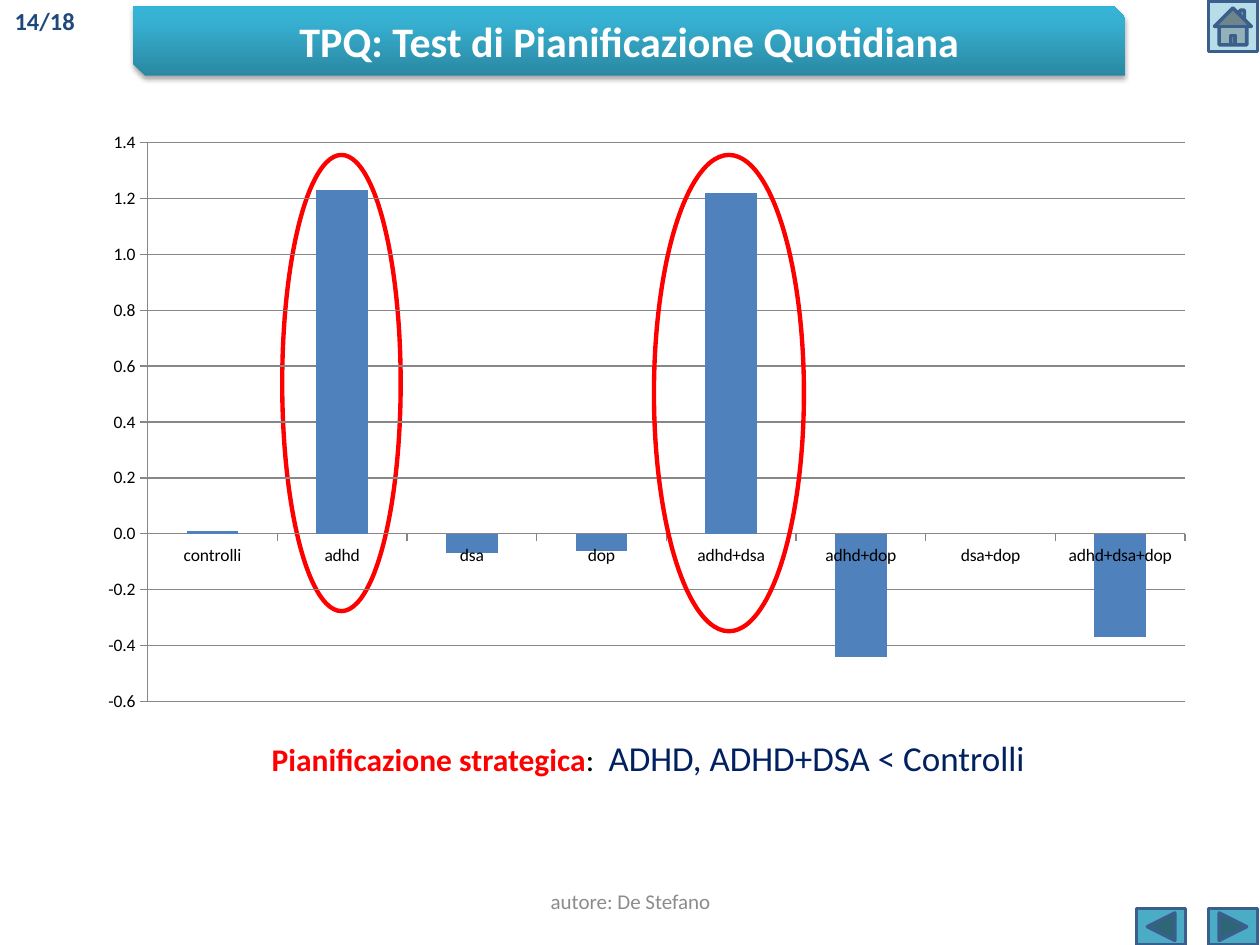
from lxml import etree
from pptx import Presentation
from pptx.chart.data import CategoryChartData
from pptx.dml.color import RGBColor
from pptx.enum.chart import XL_CHART_TYPE, XL_TICK_MARK
from pptx.enum.shapes import MSO_SHAPE as SHAPE
from pptx.enum.text import MSO_ANCHOR as ANCHOR, PP_ALIGN
from pptx.oxml import parse_xml
from pptx.oxml.ns import nsdecls, qn
from pptx.util import Inches, Pt

FONT = "Calibri"
WHITE = RGBColor(0xFF, 0xFF, 0xFF)
BLACK = RGBColor(0x00, 0x00, 0x00)
RED = RGBColor(0xFF, 0x00, 0x00)
NAVY = RGBColor(0x00, 0x20, 0x60)
DARK_BLUE = RGBColor(0x1F, 0x49, 0x7D)
BAR_BLUE = RGBColor(0x4F, 0x81, 0xBD)
BUTTON_LINE = RGBColor(0x3A, 0x5F, 0x8C)
TEAL = RGBColor(0x4B, 0xAC, 0xC6)
PALE_TEAL = RGBColor(0xB7, 0xDE, 0xE8)
GREY = RGBColor(0x8C, 0x8C, 0x8C)
GRID_GREY = RGBColor(0x87, 0x87, 0x87)
TITLE_STOPS = [(0, "2A88A2"), (80, "37B1D2"), (100, "34B4D6")]

SCORES = {
    "controlli": 0.01, "adhd": 1.23, "dsa": -0.07, "dop": -0.06,
    "adhd+dsa": 1.22, "adhd+dop": -0.44, "dsa+dop": 0, "adhd+dsa+dop": -0.37,
}


def inches(box):
    return [Inches(v) for v in box]


def add_run(p, text, size=18, color=BLACK, bold=False):
    r = p.add_run()
    r.text = text
    r.font.name, r.font.size, r.font.bold = FONT, Pt(size), bold
    r.font.color.rgb = color


def write(sp, *runs, anchor=ANCHOR.TOP):
    """Fill a shape with one centred paragraph of (text, format) runs."""
    tf = sp.text_frame
    tf.word_wrap = True
    tf.vertical_anchor = anchor
    p = tf.paragraphs[0]
    p.alignment = PP_ALIGN.CENTER
    for text, fmt in runs:
        add_run(p, text, **fmt)


def add_shape(s, kind, box, fill=None, line=None, width=2):
    sp = s.shapes.add_shape(kind, *inches(box))
    sp.shadow.inherit = False
    if fill is None:
        sp.fill.background()
    else:
        sp.fill.solid()
        sp.fill.fore_color.rgb = fill
    if line is None:
        sp.line.fill.background()
    else:
        sp.line.color.rgb = line
        sp.line.width = Pt(width)
    return sp


def add_title(s, box, text):
    sp = add_shape(s, SHAPE.SNIP_2_DIAG_RECTANGLE, box)
    sp.fill.gradient()
    sp.fill.gradient_angle = 90
    spPr = sp._element.spPr
    stops = spPr.find(qn("a:gradFill")).find(qn("a:gsLst"))
    for old in list(stops):
        stops.remove(old)
    for pos, color in TITLE_STOPS:
        gs = etree.SubElement(stops, qn("a:gs"), pos=str(pos * 1000))
        etree.SubElement(gs, qn("a:srgbClr"), val=color)
    spPr.find(qn("a:effectLst")).append(parse_xml(
        f'<a:outerShdw {nsdecls("a")} blurRad="40000" dist="23000" dir="5400000" '
        'rotWithShape="0"><a:srgbClr val="000000"><a:alpha val="35000"/>'
        '</a:srgbClr></a:outerShdw>'))
    write(sp, (text, dict(size=24, color=WHITE, bold=True)), anchor=ANCHOR.MIDDLE)


def add_page_number(s, box, text):
    sp = add_shape(s, SHAPE.RECTANGLE, box, fill=WHITE)
    write(sp, (text, dict(size=14, color=DARK_BLUE, bold=True)))


def add_text(s, box, *runs, anchor=ANCHOR.TOP):
    write(s.shapes.add_textbox(*inches(box)), *runs, anchor=anchor)


def add_highlight(s, box):
    add_shape(s, SHAPE.OVAL, box, line=RED, width=2.5)


def set_plot_area(chart, x, y, w, h):
    """Fix the inner plot area, in fractions of the chart."""
    plot_area = chart._chartSpace.chart.plotArea
    for old in plot_area.findall(qn("c:layout")):
        plot_area.remove(old)
    layout = parse_xml(f'<c:layout {nsdecls("c")}><c:manualLayout/></c:layout>')
    settings = [("layoutTarget", "inner"), ("xMode", "edge"), ("yMode", "edge"),
                ("x", x), ("y", y), ("w", w), ("h", h)]
    for name, val in settings:
        etree.SubElement(layout[0], qn(f"c:{name}"), val=str(val))
    plot_area.insert(0, layout)


def add_score_chart(s, box):
    data = CategoryChartData()
    data.categories = list(SCORES)
    data.add_series("Series 1", list(SCORES.values()))
    chart = s.shapes.add_chart(
        XL_CHART_TYPE.COLUMN_CLUSTERED, *inches(box), data).chart
    chart.has_legend = chart.has_title = False
    chart.font.name, chart.font.size = FONT, Pt(10)
    chart.font.color.rgb = BLACK

    plot = chart.plots[0]
    plot.gap_width = 150
    plot.vary_by_categories = False
    bars = plot.series[0]
    bars.invert_if_negative = False
    bars.format.fill.solid()
    bars.format.fill.fore_color.rgb = BAR_BLUE

    values = chart.value_axis
    values.minimum_scale, values.maximum_scale, values.major_unit = -0.6, 1.4, 0.2
    values.has_major_gridlines = True
    values.tick_labels.number_format = "#,##0.0"
    values.tick_labels.number_format_is_linked = False
    for axis in (values, chart.category_axis):
        axis.major_tick_mark = XL_TICK_MARK.OUTSIDE
        axis.minor_tick_mark = XL_TICK_MARK.NONE
    for part in (values, chart.category_axis, values.major_gridlines):
        part.format.line.color.rgb = GRID_GREY
        part.format.line.width = Pt(0.75)
    set_plot_area(chart, 0.071, 0.03, 0.925, 0.94)


def add_nav_buttons(s, right, top, bottom):
    """Home button at the top right, back and next at the bottom right."""
    w, h, step = 0.39, 0.29, 0.57
    x = right - w
    buttons = [
        (SHAPE.ACTION_BUTTON_HOME, (x, top, w, 0.4), PALE_TEAL),
        (SHAPE.ACTION_BUTTON_FORWARD_OR_NEXT, (x, bottom - h, w, h), TEAL),
        (SHAPE.ACTION_BUTTON_BACK_OR_PREVIOUS, (x - step, bottom - h, w, h), TEAL),
    ]
    for kind, box, fill in buttons:
        add_shape(s, kind, box, fill=fill, line=BUTTON_LINE)


def main():
    prs = Presentation()
    prs.slide_width, prs.slide_height = Inches(10), Inches(7.5)
    s = prs.slides.add_slide(prs.slide_layouts[6])
    add_page_number(s, (0, 0, 0.71, 0.34), "14/18")
    add_title(s, (1.06, 0.05, 7.87, 0.55), "TPQ: Test di Pianificazione Quotidiana")
    add_nav_buttons(s, right=9.98, top=0.01, bottom=7.5)
    add_highlight(s, (2.24, 1.23, 0.94, 3.62))
    add_score_chart(s, (0.54, 0.99, 8.9, 4.72))
    add_text(s, (1.01, 5.8, 8.27, 0.44),
             ("Pianificazione strategica", dict(color=RED, bold=True)),
             (":  ", {}),
             ("ADHD, ADHD+DSA < Controlli", dict(size=20, color=NAVY)))
    add_highlight(s, (5.19, 1.23, 1.19, 3.78))
    add_text(s, (3.42, 6.95, 3.17, 0.4),
             ("autore: De Stefano", dict(size=12, color=GREY)), anchor=ANCHOR.MIDDLE)
    prs.save("out.pptx")


if __name__ == "__main__":
    main()
